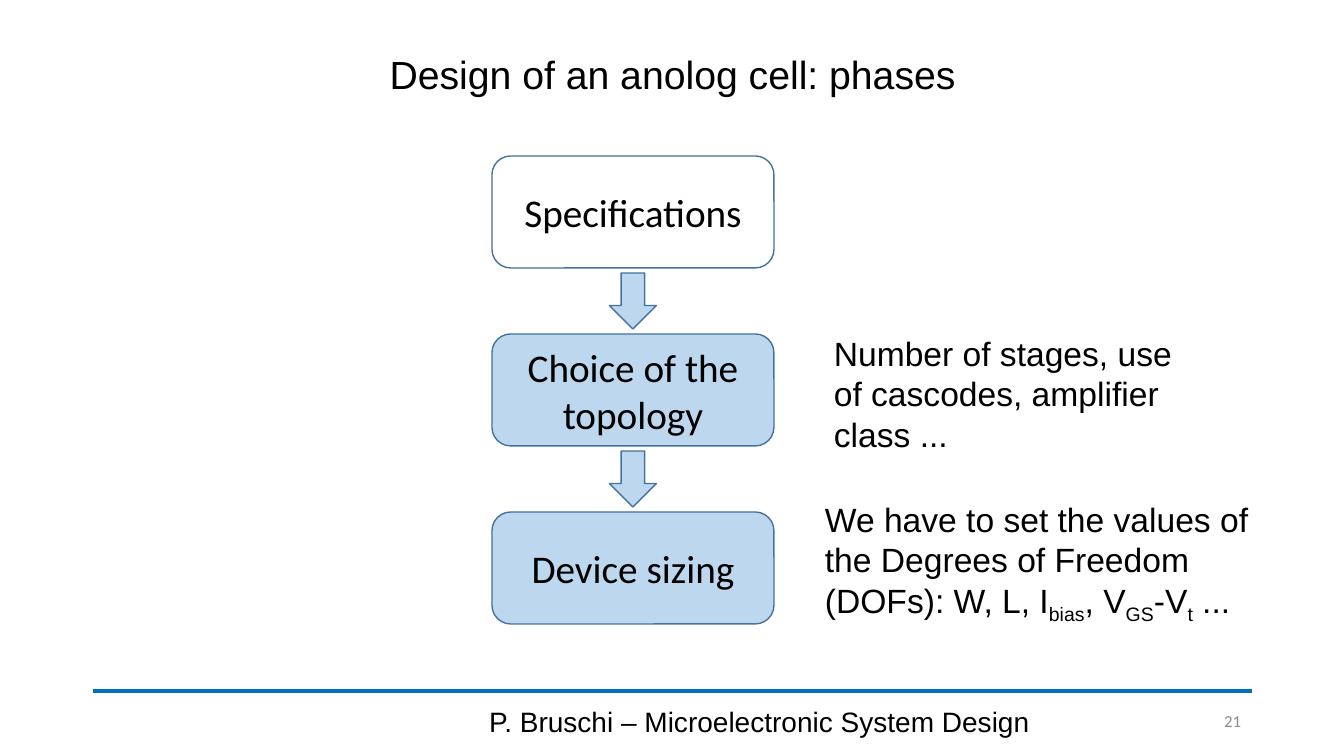
import pptx
import pptx.util
import pptx.dml.color
import pptx.enum.shapes
import pptx.enum.text
import pptx.oxml.ns
import lxml.etree

ALIGN = pptx.enum.text.PP_ALIGN
ANCHOR = pptx.enum.text.MSO_ANCHOR
SHAPE = pptx.enum.shapes.MSO_SHAPE

# Content
COLORS = {"text": "000000", "number": "8C8C8C", "rule": "0070C0",
          "fill": "BDD7EE", "outline": "43739E"}
PHASES = [("Specifications", None), ("Choice of the topology", "fill"),
          ("Device sizing", "fill")]
# Each text: spans as (wording, is subscript), place, size, font, color, alignment, anchor
TEXTS = [
    ([("Design of an anolog cell: phases", False)],
     (93, 40, 1159, 73), 28, "Arial", "text", ALIGN.CENTER, ANCHOR.MIDDLE),
    ([("P. Bruschi – Microelectronic System Design", False)],
     (446, 701, 627, 40), 20, "Arial", "text", ALIGN.CENTER, ANCHOR.MIDDLE),
    ([("21", False)],
     (1154, 701, 97, 40), 12, "Calibri", "number", ALIGN.RIGHT, ANCHOR.MIDDLE),
    ([("Number of stages, use of cascodes, amplifier class ...", False)],
     (824, 328, 379, 132), 24, "Arial", "text", ALIGN.LEFT, ANCHOR.TOP),
    ([("We have to set the values of the Degrees of Freedom (DOFs): W, L, I", False),
      ("bias", True), (", V", False), ("GS", True), ("-V", False), ("t", True),
      (" ...", False)],
     (815, 494, 450, 132), 24, "Arial", "text", ALIGN.LEFT, ANCHOR.TOP),
]

# Geometry in px
PAGE_WIDTH, PAGE_HEIGHT = 1344, 756
BOX_LEFT, BOX_TOP, BOX_WIDTH, BOX_HEIGHT, BOX_STEP = 492, 156, 282, 112, 178
ARROW_WIDTH, ARROW_HEIGHT = 47, 56
RULE_LEFT, RULE_RIGHT, RULE_Y = 93, 1252, 691


def px(length):
    return pptx.util.Emu(round(length * 914400 / 100.8))


def color(name):
    return pptx.dml.color.RGBColor.from_string(COLORS[name])


def write(shape, spans, size, font, ink, align, anchor):
    frame = shape.text_frame
    frame.word_wrap = True
    frame.vertical_anchor = anchor
    para = frame.paragraphs[0]
    para.alignment = align
    para.font.size = pptx.util.Pt(size)
    para.font.name = font
    para.font.color.rgb = color(ink)
    for wording, subscript in spans:
        span = para.add_run()
        span.text = wording
        if subscript:
            span._r.get_or_add_rPr().set("baseline", "-25000")
    return para


def add_outlined(page, kind, place, fill):
    shape = page.shapes.add_shape(kind, *map(px, place))
    shape.shadow.inherit = False
    if fill:
        shape.fill.solid()
        shape.fill.fore_color.rgb = color(fill)
    else:
        shape.fill.background()
    shape.line.color.rgb = color("outline")
    shape.line.width = pptx.util.Pt(1)
    return shape


def main():
    deck = pptx.Presentation()
    deck.slide_width, deck.slide_height = px(PAGE_WIDTH), px(PAGE_HEIGHT)
    page = deck.slides.add_slide(deck.slide_layouts[6])

    # Footer rule
    rule = page.shapes.add_connector(
        pptx.enum.shapes.MSO_CONNECTOR.STRAIGHT,
        px(RULE_LEFT), px(RULE_Y), px(RULE_RIGHT), px(RULE_Y))
    rule.line.color.rgb = color("rule")
    rule.line.width = pptx.util.Pt(2.75)
    lxml.etree.SubElement(rule._element.spPr, pptx.oxml.ns.qn("a:effectLst"))

    # Title, footer and side notes
    for spans, place, *style in TEXTS:
        box = page.shapes.add_textbox(*map(px, place))
        para = write(box, spans, *style)
        if spans is TEXTS[0][0]:
            para.line_spacing = 0.9

    # Phases, with an arrow centred in each gap
    arrow_left = BOX_LEFT + (BOX_WIDTH - ARROW_WIDTH) / 2
    arrow_offset = (BOX_HEIGHT + BOX_STEP - ARROW_HEIGHT) / 2
    for index, (phase, fill) in enumerate(PHASES):
        top = BOX_TOP + index * BOX_STEP
        box = add_outlined(page, SHAPE.ROUNDED_RECTANGLE,
                           (BOX_LEFT, top, BOX_WIDTH, BOX_HEIGHT), fill)
        write(box, [(phase, False)], 28, "Calibri", "text", ALIGN.CENTER, ANCHOR.MIDDLE)
        if index < len(PHASES) - 1:
            add_outlined(page, SHAPE.DOWN_ARROW,
                         (arrow_left, top + arrow_offset, ARROW_WIDTH, ARROW_HEIGHT), "fill")

    deck.save("out.pptx")


if __name__ == "__main__":
    main()
